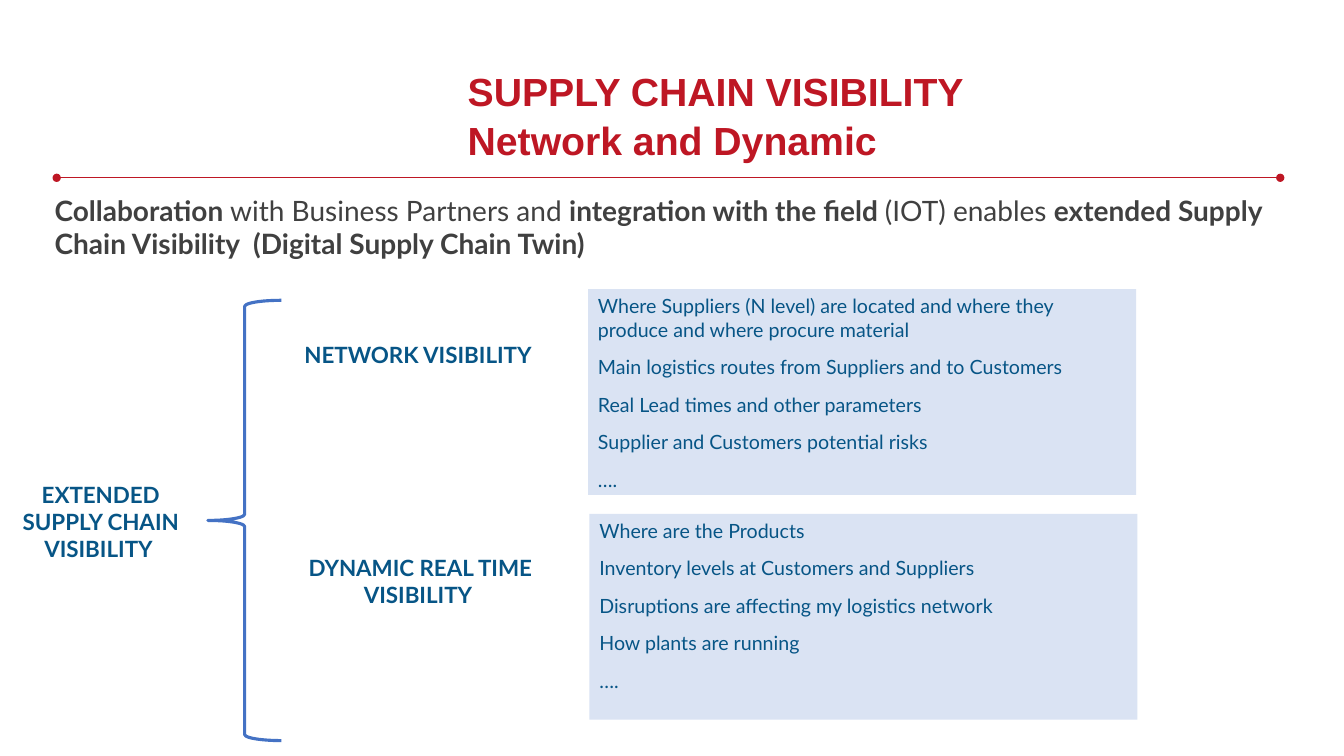
from lxml.etree import SubElement
from pptx import Presentation
from pptx.dml.color import RGBColor
from pptx.enum.shapes import MSO_CONNECTOR, MSO_SHAPE
from pptx.enum.text import MSO_ANCHOR, PP_ALIGN
from pptx.oxml.ns import qn
from pptx.util import Pt

COLORS = {
    "red": "BE1724",
    "navy": "075586",
    "gray": "404040",
    "pale": "DAE3F3",
    "blue": "4472C4",
}

NETWORK = [
    "Where Suppliers (N level) are located and where they produce and where procure material",
    "Main logistics routes from Suppliers and to Customers",
    "Real Lead times and other parameters",
    "Supplier and Customers potential risks",
    "….",
]
DYNAMIC = [
    "Where are the Products",
    "Inventory levels at Customers and Suppliers",
    "Disruptions are affecting my logistics network",
    "How plants are running",
    "….",
]
CLAIM = [
    ("Collaboration", True),
    (" with Business Partners and ", False),
    ("integration with the field ", True),
    ("(IOT) enables ", False),
    ("extended Supply Chain Visibility  (Digital Supply Chain Twin)", True),
]
LABELS = [
    ("EXTENDED SUPPLY CHAIN VISIBILITY ", 0, 340, 144, 75),
    ("NETWORK VISIBILITY ", 201.5, 240.5, 197.5, 22.5),
    ("DYNAMIC REAL TIME VISIBILITY ", 201.5, 392.5, 197.5, 22.5),
]


def color(name):
    return RGBColor.from_string(COLORS[name])


def write(frame, lines, size, ink, font="Lato", bold=False, before=0,
          align=PP_ALIGN.LEFT, anchor=MSO_ANCHOR.TOP, leading=None):
    frame.word_wrap = True
    frame.vertical_anchor = anchor
    for index, line in enumerate(lines):
        para = frame.add_paragraph() if index else frame.paragraphs[0]
        para.alignment = align
        para.space_before = Pt(before)
        if leading:
            para.line_spacing = leading
        parts = [(line, bold)] if isinstance(line, str) else line
        for text, heavy in parts:
            run = para.add_run()
            run.text = text
            run.font.name = font
            run.font.size = Pt(size)
            run.font.bold = heavy
            run.font.color.rgb = color(ink)


def add_text(slide, lines, left, top, width, height, **style):
    box = slide.shapes.add_textbox(Pt(left), Pt(top), Pt(width), Pt(height))
    write(box.text_frame, lines, **style)
    return box.text_frame


def add_panel(slide, lines, left, top):
    panel = slide.shapes.add_shape(
        MSO_SHAPE.RECTANGLE, Pt(left), Pt(top), Pt(391.5), Pt(147))
    panel.shadow.inherit = False
    panel.fill.solid()
    panel.fill.fore_color.rgb = color("pale")
    panel.line.fill.background()
    write(panel.text_frame, lines, size=14, ink="navy", before=10)


def add_brace(slide, left, top, width, height):
    brace = slide.shapes.add_shape(
        MSO_SHAPE.LEFT_BRACE, Pt(left), Pt(top), Pt(width), Pt(height))
    brace.shadow.inherit = False
    brace.fill.background()
    brace.line.color.rgb = color("blue")
    brace.line.width = Pt(2.25)


def add_rule(slide, left, right, top):
    rule = slide.shapes.add_connector(
        MSO_CONNECTOR.STRAIGHT, Pt(left), Pt(top), Pt(right), Pt(top))
    rule.line.color.rgb = color("red")
    rule.line.width = Pt(0.75)
    props = rule.line._get_or_add_ln()
    for end in ("a:headEnd", "a:tailEnd"):
        SubElement(props, qn(end), type="oval")
    SubElement(rule._element.spPr, qn("a:effectLst"))


def main():
    deck = Presentation()
    deck.slide_width, deck.slide_height = Pt(960), Pt(540)
    slide = deck.slides.add_slide(deck.slide_layouts[6])

    add_rule(slide, 40.5, 914.5, 127)
    add_text(slide, ["SUPPLY CHAIN VISIBILITY", "Network and Dynamic"],
             327, 43, 628.5, 75, size=28, ink="red", font="Arial",
             bold=True, leading=1.04)
    add_panel(slide, NETWORK, 420, 206.5)
    add_panel(slide, DYNAMIC, 421, 367)
    add_brace(slide, 148.5, 214.5, 52.5, 314.5)
    for text, *place in LABELS:
        add_text(slide, [text], *place, size=16, ink="navy", bold=True,
                 before=10, align=PP_ALIGN.CENTER)
    claim = add_text(slide, [CLAIM], 39, 111, 867.5, 75, size=20,
                     ink="gray", anchor=MSO_ANCHOR.BOTTOM)
    claim.margin_left = claim.margin_right = claim.margin_bottom = 0

    deck.save("out.pptx")


if __name__ == "__main__":
    main()
